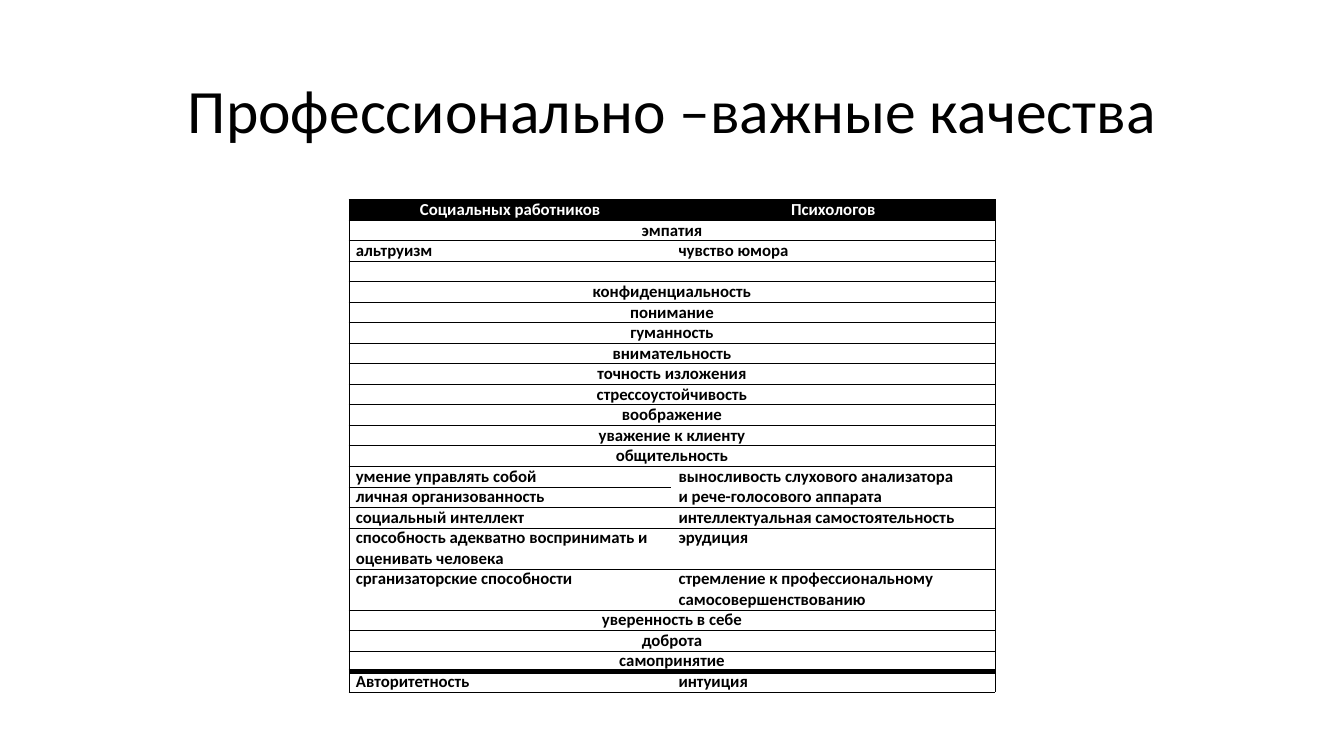
from dataclasses import dataclass

import lxml.etree
import pptx
import pptx.dml.color
import pptx.enum.text
import pptx.oxml.ns
import pptx.slide
import pptx.table
import pptx.text.text
import pptx.util

EMU_PER_PX = 9144
LINE_HEIGHT = 20
COLUMN_WIDTHS = (320, 321)
CELL_INSET = 7
NO_STYLE_NO_GRID = "{2D5ABB26-0587-4C30-8999-92F81FD0307C}"
CENTER = pptx.enum.text.PP_ALIGN.CENTER
LEFT = pptx.enum.text.PP_ALIGN.LEFT


@dataclass(frozen=True)
class Theme:
    font: str = "Calibri"
    ink: str = "000000"
    paper: str = "FFFFFF"
    title_size: int = 44
    table_size: int = 12
    thin_line: float = 0.5
    thick_line: float = 4


@dataclass(frozen=True)
class QualityRow:
    """One row; without a right text, the left text spans both columns."""
    left: str
    right: str | None = None
    lines: int = 1
    header: bool = False
    thick_top: bool = False
    joins_next: bool = False
    joins_previous: bool = False


THEME = Theme()

ROWS = [
    QualityRow("Социальных работников", "Психологов", header=True),
    QualityRow("эмпатия"),
    QualityRow("альтруизм", "чувство юмора"),
    QualityRow("", ""),
    QualityRow("конфиденциальность"),
    QualityRow("понимание"),
    QualityRow("гуманность"),
    QualityRow("внимательность"),
    QualityRow("точность изложения"),
    QualityRow("стрессоустойчивость"),
    QualityRow("воображение"),
    QualityRow("уважение к клиенту"),
    QualityRow("общительность"),
    QualityRow("умение управлять собой",
               "выносливость слухового анализатора\nи рече-голосового аппарата",
               joins_next=True),
    QualityRow("личная организованность", "", joins_previous=True),
    QualityRow("социальный интеллект", "интеллектуальная самостоятельность"),
    QualityRow("способность адекватно воспринимать и оценивать человека",
               "эрудиция", lines=2),
    QualityRow("срганизаторские способности",
               "стремление к профессиональному самосовершенствованию", lines=2),
    QualityRow("уверенность в себе"),
    QualityRow("доброта"),
    QualityRow("самопринятие"),
    QualityRow("Авторитетность", "интуиция", thick_top=True),
]


def px(length: int) -> pptx.util.Emu:
    return pptx.util.Emu(length * EMU_PER_PX)


def rgb(color: str) -> pptx.dml.color.RGBColor:
    return pptx.dml.color.RGBColor.from_string(color)


def add_run(paragraph: pptx.text.text._Paragraph, text: str, size: int,
            color: str, bold: bool = False) -> None:
    run = paragraph.add_run()
    run.text = text
    run.font.name = THEME.font
    run.font.size = pptx.util.Pt(size)
    run.font.bold = bold
    run.font.color.rgb = rgb(color)


def write_cell(cell: pptx.table._Cell, text: str, color: str,
               alignment: pptx.enum.text.PP_ALIGN) -> None:
    cell.margin_left = cell.margin_right = px(CELL_INSET)
    cell.margin_top = cell.margin_bottom = 0
    frame = cell.text_frame
    for index, line in enumerate(text.split("\n")):
        paragraph = frame.add_paragraph() if index else frame.paragraphs[0]
        paragraph.alignment = alignment
        if line:
            add_run(paragraph, line, THEME.table_size, color, bold=True)
        else:
            end = lxml.etree.SubElement(paragraph._p, pptx.oxml.ns.qn("a:endParaRPr"))
            end.set("sz", str(THEME.table_size * 100))


def set_borders(cell: pptx.table._Cell, widths: dict[str, float]) -> None:
    """Draw the sides L, R, T, B in points; a side of width 0 gets no line."""
    properties = cell._tc.get_or_add_tcPr()
    for index, side in enumerate("LRTB"):
        line = lxml.etree.Element(pptx.oxml.ns.qn(f"a:ln{side}"))
        width = widths[side]
        if width:
            line.set("w", str(pptx.util.Pt(width)))
            fill = lxml.etree.SubElement(line, pptx.oxml.ns.qn("a:solidFill"))
            color = lxml.etree.SubElement(fill, pptx.oxml.ns.qn("a:srgbClr"))
            color.set("val", THEME.ink)
        else:
            lxml.etree.SubElement(line, pptx.oxml.ns.qn("a:noFill"))
        properties.insert(index, line)


def border_widths(index: int, column: int) -> dict[str, float]:
    row = ROWS[index]
    spans = row.right is None
    thin = THEME.thin_line
    thick_bottom = index + 1 < len(ROWS) and ROWS[index + 1].thick_top
    return {
        "L": thin if column == 0 else 0,
        "R": thin if column == 1 or spans else 0,
        "T": THEME.thick_line if row.thick_top
        else 0 if row.joins_previous and column == 1 else thin,
        "B": THEME.thick_line if thick_bottom else thin,
    }


def add_title(slide: pptx.slide.Slide, text: str) -> None:
    title = slide.shapes.title
    title.left, title.top, title.width, title.height = map(px, (92, 40, 1150, 145))
    title.text_frame.vertical_anchor = pptx.enum.text.MSO_ANCHOR.MIDDLE
    paragraph = title.text_frame.paragraphs[0]
    paragraph.alignment = CENTER
    paragraph.line_spacing = 0.9
    add_run(paragraph, text, THEME.title_size, THEME.ink)


def add_quality_table(slide: pptx.slide.Slide) -> None:
    height = LINE_HEIGHT * sum(row.lines for row in ROWS)
    frame = slide.shapes.add_table(len(ROWS), len(COLUMN_WIDTHS), px(346), px(198),
                                   px(sum(COLUMN_WIDTHS)), px(height))
    table = frame.table
    table.horz_banding = False
    style = table._tbl.tblPr.find(pptx.oxml.ns.qn("a:tableStyleId"))
    style.text = NO_STYLE_NO_GRID
    for column, width in zip(table.columns, COLUMN_WIDTHS):
        column.width = px(width)

    for index, row in enumerate(ROWS):
        table.rows[index].height = px(LINE_HEIGHT * row.lines)
        spans = row.right is None
        text_color, fill_color = ((THEME.paper, THEME.ink) if row.header
                                  else (THEME.ink, THEME.paper))
        alignment = CENTER if row.header or spans else LEFT
        for column, text in enumerate((row.left, row.right or "")):
            cell = table.cell(index, column)
            write_cell(cell, text, text_color, alignment)
            cell.fill.solid()
            cell.fill.fore_color.rgb = rgb(fill_color)
            set_borders(cell, border_widths(index, column))
        if spans:
            table.cell(index, 0).merge(table.cell(index, 1))
        if row.joins_next:
            table.cell(index, 1).merge(table.cell(index + 1, 1))


def main() -> None:
    presentation = pptx.Presentation()
    presentation.slide_width, presentation.slide_height = px(1333), px(750)
    slide = presentation.slides.add_slide(presentation.slide_layouts[5])
    add_title(slide, "Профессионально –важные качества")
    add_quality_table(slide)
    presentation.save("out.pptx")


if __name__ == "__main__":
    main()
